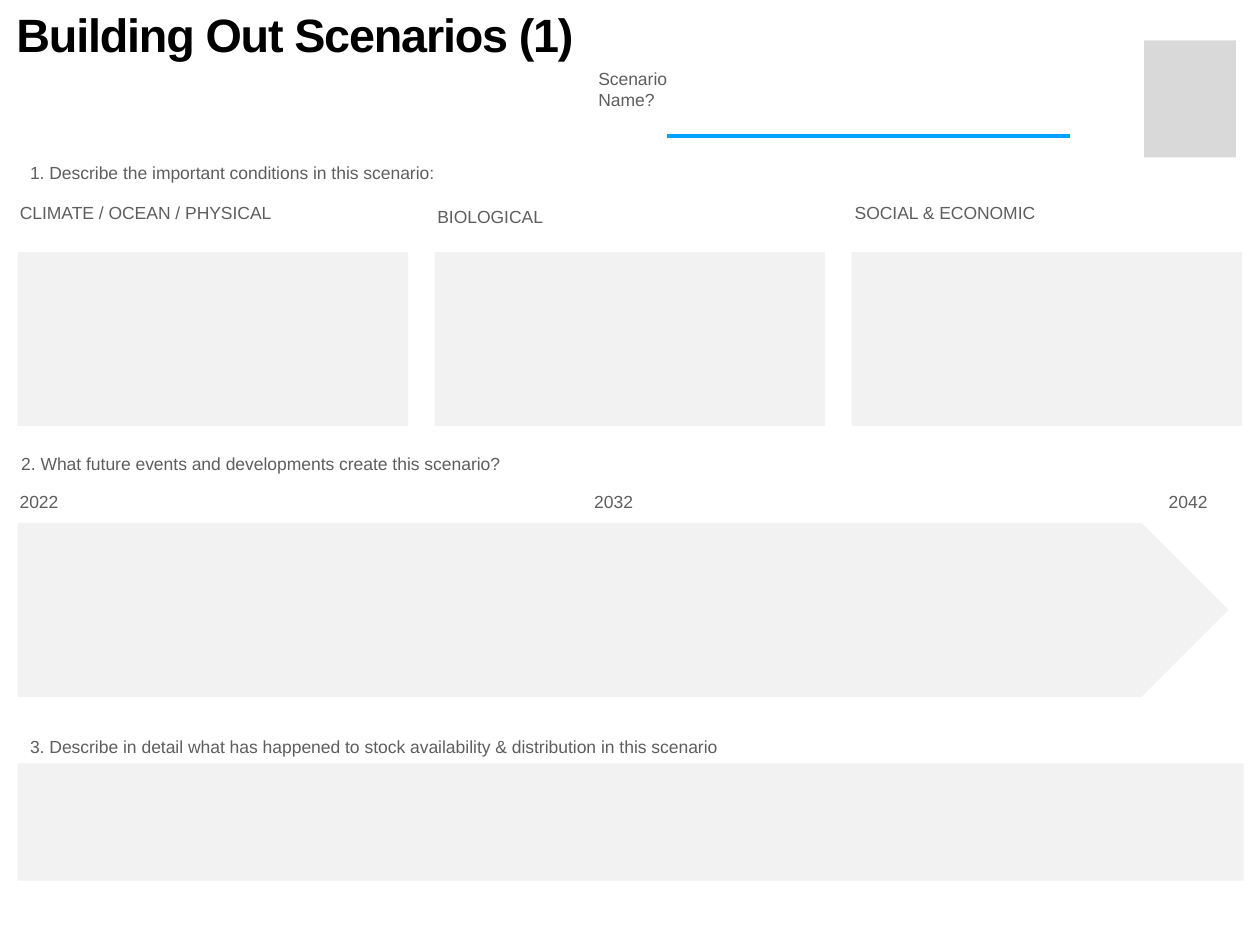
from lxml import etree
from pptx import Presentation
from pptx import util as u
from pptx.dml.color import RGBColor
from pptx.enum import shapes, text
from pptx.oxml.ns import qn

HUES = {"title": "000000", "text": "5E5E5E", "line": "00A2FF",
        "panel": "F2F2F2", "badge": "D9D9D9"}
RECT = shapes.MSO_SHAPE.RECTANGLE


def hue(name):
    """Return the named colour."""
    return RGBColor.from_string(HUES[name])


def place(box):
    """Turn a box in inches into lengths."""
    return [u.Inches(n) for n in box]


def inset(frame, size):
    """Give a text frame the same margin on all sides."""
    frame.margin_left = frame.margin_right = u.Inches(size)
    frame.margin_top = frame.margin_bottom = u.Inches(size)


def style(frame, size, name, bold=False):
    """Format every run of a text frame."""
    for para in frame.paragraphs:
        for run in para.runs:
            run.font.name = "Arial"
            run.font.size = u.Pt(size)
            run.font.bold = bold
            run.font.color.rgb = hue(name)


def note(slide, box, words):
    """Add a wrapped line of text that grows with its wording."""
    frame = slide.shapes.add_textbox(*place(box)).text_frame
    frame.word_wrap = True
    frame.auto_size = text.MSO_AUTO_SIZE.SHAPE_TO_FIT_TEXT
    frame.text = words
    style(frame, 10, "text")
    return frame


def label(slide, box, words):
    """Add a tight, centred label on one line."""
    frame = note(slide, box, words)
    frame.word_wrap = False
    frame.vertical_anchor = text.MSO_ANCHOR.MIDDLE
    frame.paragraphs[0].alignment = text.PP_ALIGN.CENTER
    inset(frame, 0.02)


def panel(slide, box, name="panel", kind=RECT):
    """Add a plain filled shape."""
    shape = slide.shapes.add_shape(kind, *place(box))
    shape.shadow.inherit = False
    shape.fill.solid()
    shape.fill.fore_color.rgb = hue(name)
    shape.line.fill.background()


def header(slide, box):
    """Place the title, the name field with its rule, and the badge."""
    left, top, width, height = box
    title = slide.shapes.title
    title.left, title.top, title.width, title.height = place(
        (left, top, 9.01, 0.59))
    frame = title.text_frame
    frame.text = "Building Out Scenarios (1)"
    frame.word_wrap = True
    frame.auto_size = text.MSO_AUTO_SIZE.NONE
    frame.vertical_anchor = text.MSO_ANCHOR.TOP
    inset(frame, 0.06)
    para = frame.paragraphs[0]
    para.alignment = text.PP_ALIGN.LEFT
    para.line_spacing = 0.8
    style(frame, 26.7, "title", True)
    para.runs[0].font._element.set("spc", "-70")

    note(slide, (left + 4.58, top + 0.42, 0.87, 0.44), "Scenario Name?")
    level = top + 1.01
    rule = slide.shapes.add_connector(
        shapes.MSO_CONNECTOR.STRAIGHT,
        *place((left + 5.22, level, left + 8.42, level)))
    rule.line.color.rgb = hue("line")
    rule.line.width = u.Pt(2)
    etree.SubElement(rule._element.spPr, qn("a:effectLst"))
    panel(slide, (left + width - 0.73, top + height - 0.93, 0.73, 0.93),
          "badge")


def states(slide, box):
    """Place the first question over three headed panels."""
    left, top, width, height = box
    note(slide, (left, top, 3.93, 0.27),
         "1. Describe the important conditions in this scenario:")
    heads = [("CLIMATE / OCEAN / PHYSICAL", 0.35, 2.05),
             ("BIOLOGICAL", 0.38, 0.9),
             ("SOCIAL & ECONOMIC", 0.35, 1.5)]
    wide, tall = 3.1, 1.38
    step = (width - wide) / (len(heads) - 1)
    for i, (words, drop, span) in enumerate(heads):
        start = left + i * step
        label(slide, (start - 0.01, top + drop, span, 0.2), words)
        panel(slide, (start, top + height - tall, wide, tall))


def events(slide, box):
    """Place the second question over a dated arrow."""
    left, top, width, height = box
    note(slide, (left - 0.07, top, 5.45, 0.27),
         "2. What future events and developments create this scenario?")
    for i, year in enumerate(("2022", "2032", "2042")):
        label(slide, (left - 0.01 + i * 4.56, top + 0.33, 0.36, 0.2), year)
    tall = 1.38
    panel(slide, (left, top + height - tall, width, tall),
          kind=shapes.MSO_SHAPE.PENTAGON)


def detail(slide, box):
    """Place the third question over its answer panel."""
    left, top, width, height = box
    note(slide, (left, top, 7.12, 0.27),
         "3. Describe in detail what has happened to stock availability "
         "& distribution in this scenario")
    panel(slide, (left, top + 0.27, width, height - 0.27))


def main():
    """Build the slide and save it."""
    deck = Presentation()
    deck.slide_width, deck.slide_height = u.Inches(10), u.Inches(7.5)
    slide = deck.slides.add_slide(deck.slide_layouts[5])
    header(slide, (0.07, 0.07, 9.74, 1.18))
    states(slide, (0.14, 1.24, 9.72, 2.14))
    events(slide, (0.14, 3.55, 9.61, 1.98))
    detail(slide, (0.14, 5.79, 9.73, 1.2))
    deck.save("out.pptx")


if __name__ == "__main__":
    main()
